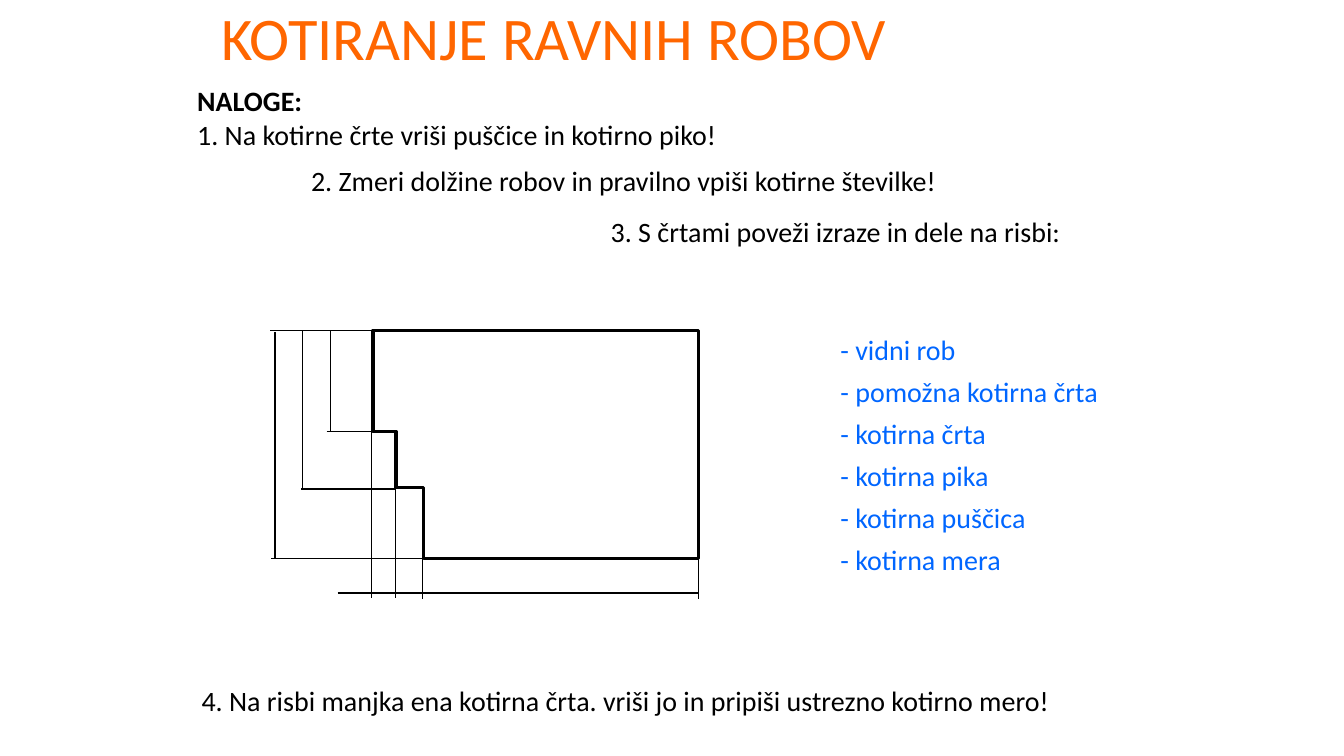
from dataclasses import dataclass

from lxml.etree import SubElement
from pptx import Presentation
from pptx.dml.color import RGBColor
from pptx.enum.shapes import MSO_CONNECTOR as Connector
from pptx.enum.text import MSO_ANCHOR as Anchor
from pptx.oxml.ns import qn
from pptx.util import Cm, Pt


@dataclass(frozen=True)
class Theme:
    font: str = "Calibri"
    title_size: float = 43.2
    body_size: float = 20
    edge_width: float = 2.25
    dimension_width: float = 1
    title: RGBColor = RGBColor(0xFF, 0x66, 0x00)
    ink: RGBColor = RGBColor(0x00, 0x00, 0x00)
    terms: RGBColor = RGBColor(0x00, 0x66, 0xFF)


theme = Theme()
deck = Presentation()
deck.slide_width, deck.slide_height = Cm(33.87), Cm(19.05)
page = deck.slides.add_slide(deck.slide_layouts[6])


def add_text(lines, left, top, width, height, size=theme.body_size, color=theme.ink,
             bold_first=False, space_after=0, line_spacing=1.0, anchor=Anchor.TOP, wrap=True):
    box = page.shapes.add_textbox(Cm(left), Cm(top), Cm(width), Cm(height))
    frame = box.text_frame
    frame.word_wrap = wrap
    frame.vertical_anchor = anchor
    for index, line in enumerate(lines):
        para = frame.paragraphs[0] if index == 0 else frame.add_paragraph()
        para.space_after = Pt(space_after)
        para.line_spacing = line_spacing
        span = para.add_run()
        span.text = line
        span.font.name = theme.font
        span.font.size = Pt(size)
        span.font.bold = bold_first and index == 0
        span.font.color.rgb = color


def add_dimension_line(x1, y1, x2, y2):
    line = page.shapes.add_connector(Connector.STRAIGHT, Cm(x1), Cm(y1), Cm(x2), Cm(y2))
    line.line.color.rgb = theme.ink
    line.line.width = Pt(theme.dimension_width)
    SubElement(line._element.spPr, qn("a:effectLst"))


add_text(["KOTIRANJE RAVNIH ROBOV"], 5.33, 0.08, 23.83, 1.9, size=theme.title_size,
         color=theme.title, line_spacing=0.9, anchor=Anchor.MIDDLE)

# Stepped part with visible edges
corners = [(17.6, 14.07), (10.67, 14.07), (10.67, 12.29), (9.98, 12.29),
           (9.98, 10.87), (9.4, 10.87), (9.4, 8.33), (17.6, 8.33)]
points = [(Cm(x), Cm(y)) for x, y in corners]
builder = page.shapes.build_freeform(*points[0])
builder.add_line_segments(points[1:], close=True)
part = builder.convert_to_shape()
part.shadow.inherit = False
part.fill.background()
part.line.color.rgb = theme.ink
part.line.width = Pt(theme.edge_width)

# Horizontal lines: y, left end, right end
for y, left, right in [(8.33, 6.81, 9.4), (10.87, 8.23, 9.42), (12.32, 7.59, 9.98),
                       (14.07, 6.83, 10.64), (14.94, 8.51, 17.6)]:
    add_dimension_line(left, y, right, y)

# Vertical lines: x, upper end, lower end
for x, top, bottom in [(6.93, 8.36, 14.07), (7.62, 8.33, 12.32), (8.33, 8.33, 10.87),
                       (9.37, 10.87, 15.06), (9.96, 12.32, 15.06),
                       (10.64, 14.07, 15.09), (17.6, 14.07, 15.09)]:
    add_dimension_line(x, top, x, bottom)

add_text(["NALOGE:", "1. Na kotirne črte vriši puščice in kotirno piko!"],
         4.72, 1.98, 17.6, 1.98, bold_first=True)
add_text(["2. Zmeri dolžine robov in pravilno vpiši kotirne številke!"], 7.59, 3.99, 17.81, 1.11)
add_text(["3. S črtami poveži izraze in dele na risbi:"], 15.14, 5.28, 13.26, 1.11, wrap=False)
add_text(["- vidni rob", "- pomožna kotirna črta", "- kotirna črta",
          "- kotirna pika", "- kotirna puščica", "- kotirna mera"],
         20.93, 8.26, 7.82, 6.45, color=theme.terms, space_after=6)
add_text(["4. Na risbi manjka ena kotirna črta. vriši jo in pripiši ustrezno kotirno mero!"],
         4.83, 17.09, 24.03, 1.11)

deck.save("out.pptx")
